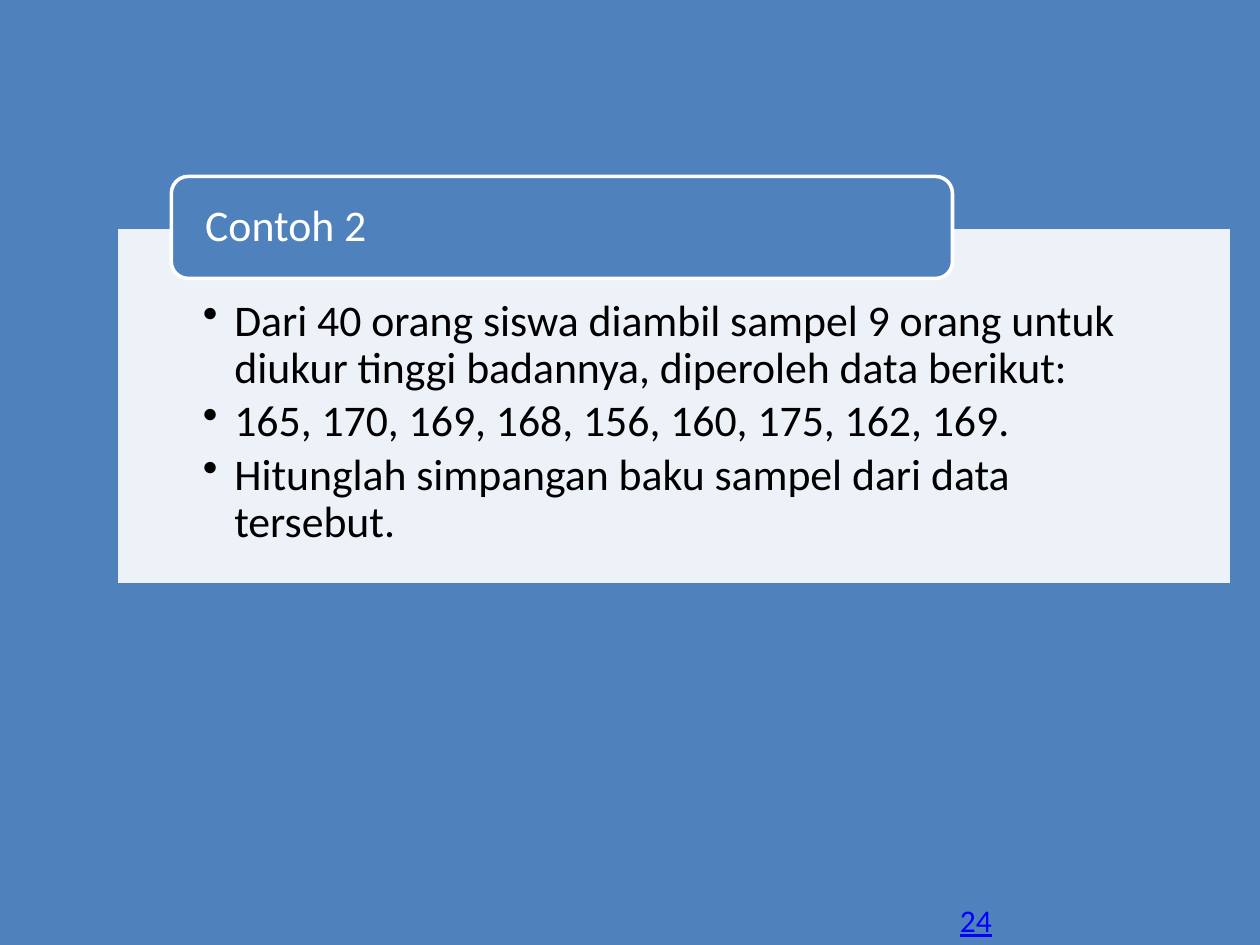
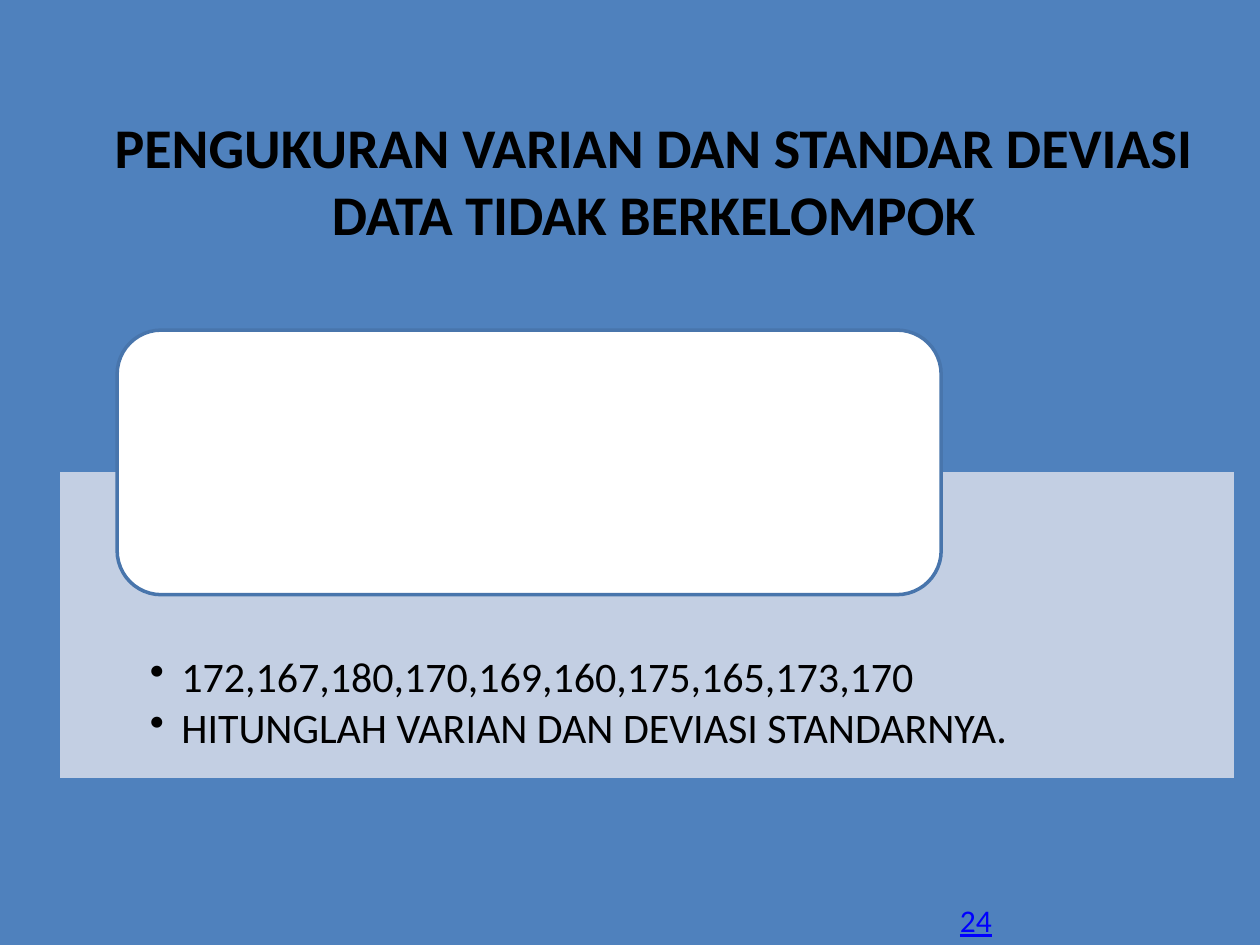
from dataclasses import dataclass

from lxml.etree import SubElement
from pptx import Presentation
from pptx.dml.color import RGBColor
from pptx.enum.shapes import MSO_SHAPE
from pptx.enum.text import MSO_ANCHOR, PP_ALIGN
from pptx.oxml.ns import qn
from pptx.util import Inches, Pt

COLS, ROWS = 100, 75
WIDTH, HEIGHT = Inches(10), Inches(7.5)
COL, ROW = WIDTH // COLS, HEIGHT // ROWS
BLUE, DARK_BLUE, PALE = "4F81BD", "4875AC", "D0D8E8"
WHITE, BLACK, LINK_BLUE = "FFFFFF", "000000", "0000FF"
FONT = "Calibri"
INDENT = 2.5 * COL
PAGE_NUMBER = "24"


@dataclass(frozen=True)
class Area:
    col: float
    row: float
    cols: float
    rows: float

    def emu(self) -> tuple[int, int, int, int]:
        return (int(self.col * COL), int(self.row * ROW),
                int(self.cols * COL), int(self.rows * ROW))


@dataclass(frozen=True)
class Panel:
    area: Area
    fill: str
    side: float
    top: float
    size: int
    bullets: tuple[str, ...]


@dataclass(frozen=True)
class Label:
    area: Area
    fill: str
    line: str
    text: str = ""


@dataclass(frozen=True)
class Page:
    panel: Panel
    label: Label
    title: tuple[str, ...] = ()


TITLE_AREA = Area(3.8, 8.4, 96.2, 14.5)
NUMBER_AREA = Area(75.2, 71, 4.6, 4)

PAGES = (
    Page(
        Panel(Area(9.2, 18, 88.6, 28.4), WHITE, 6.9, 5.7, 25, (
            "Dari 40 orang siswa diambil sampel 9 orang untuk diukur tinggi "
            "badannya, diperoleh data berikut:",
            "165, 170, 169, 168, 156, 160, 175, 162, 169.",
            "Hitunglah simpangan baku sampel dari data tersebut.",
        )),
        Label(Area(13.6, 14, 62, 8.1), BLUE, WHITE, "Contoh 2"),
    ),
    Page(
        Panel(Area(4.6, 37.3, 93.5, 24.6), PALE, 7.3, 14.8, 24, (
            "172,167,180,170,169,160,175,165,173,170",
            "HITUNGLAH VARIAN DAN DEVIASI STANDARNYA.",
        )),
        Label(Area(9.3, 26.2, 65.4, 21), WHITE, DARK_BLUE),
        ("PENGUKURAN VARIAN DAN STANDAR DEVIASI", "DATA TIDAK BERKELOMPOK"),
    ),
)


def rgb(color: str) -> RGBColor:
    return RGBColor.from_string(color)


def apply(target, **values) -> None:
    for name, value in values.items():
        setattr(target, name, value)


def write(p, text: str, size: int, color: str, **font) -> None:
    r = p.add_run()
    r.text = text
    apply(r.font, name=FONT, size=Pt(size), **font)
    r.font.color.rgb = rgb(color)


def add_box(s, kind, area: Area, fill: str, line: str):
    sp = s.shapes.add_shape(kind, *area.emu())
    sp.shadow.inherit = False
    sp.fill.solid()
    sp.fill.fore_color.rgb = rgb(fill)
    sp.line.color.rgb = rgb(line)
    sp.line.width = Pt(2)
    return sp


def add_panel(s, panel: Panel) -> None:
    sp = add_box(s, MSO_SHAPE.RECTANGLE, panel.area, panel.fill, BLUE)
    color = sp.fill._xPr.find(qn("a:solidFill"))[0]
    SubElement(color, qn("a:alpha"), val="90000")
    tf = sp.text_frame
    side = int(panel.side * COL)
    apply(tf, word_wrap=True, vertical_anchor=MSO_ANCHOR.TOP,
          margin_left=side, margin_right=side,
          margin_top=int(panel.top * ROW), margin_bottom=int(1.9 * ROW))
    for i, text in enumerate(panel.bullets):
        p = tf.add_paragraph() if i else tf.paragraphs[0]
        apply(p, alignment=PP_ALIGN.LEFT, level=1, line_spacing=0.9,
              space_after=Pt(0.14 * panel.size))
        pPr = p._p.get_or_add_pPr()
        pPr.set("marL", str(int(INDENT)))
        pPr.set("indent", str(-int(INDENT)))
        SubElement(pPr, qn("a:buChar"), char="•")
        write(p, text, panel.size, BLACK)


def add_label(s, label: Label) -> None:
    sp = add_box(s, MSO_SHAPE.ROUNDED_RECTANGLE, label.area, label.fill, label.line)
    if label.text:
        tf = sp.text_frame
        side = int(2.3 * COL)
        apply(tf, word_wrap=True, vertical_anchor=MSO_ANCHOR.MIDDLE,
              margin_left=side, margin_right=side, margin_top=0, margin_bottom=0)
        p = tf.paragraphs[0]
        apply(p, alignment=PP_ALIGN.LEFT, line_spacing=0.9)
        write(p, label.text, 25, WHITE)


def add_number(s) -> None:
    tf = s.shapes.add_textbox(*NUMBER_AREA.emu()).text_frame
    tf.word_wrap = False
    write(tf.paragraphs[0], PAGE_NUMBER, 18, LINK_BLUE, underline=True)


def set_title(s, lines: tuple[str, ...]) -> None:
    sp = s.shapes.title
    left, top, width, height = TITLE_AREA.emu()
    apply(sp, left=left, top=top, width=width, height=height)
    tf = sp.text_frame
    apply(tf, word_wrap=True, vertical_anchor=MSO_ANCHOR.TOP)
    p = tf.paragraphs[0]
    p.alignment = PP_ALIGN.CENTER
    for i, line in enumerate(lines):
        if i:
            p.add_line_break()
        write(p, line, 32, BLACK, bold=True)


def add_page(prs, page: Page) -> None:
    layout = "Title Only" if page.title else "Blank"
    s = prs.slides.add_slide(prs.slide_layouts.get_by_name(layout))
    add_number(s)
    if page.title:
        set_title(s, page.title)
    add_panel(s, page.panel)
    add_label(s, page.label)


def main() -> None:
    prs = Presentation()
    apply(prs, slide_width=WIDTH, slide_height=HEIGHT)
    background = prs.slide_master.background.fill
    background.solid()
    background.fore_color.rgb = rgb(BLUE)
    for page in PAGES:
        add_page(prs, page)
    prs.save("out.pptx")


if __name__ == "__main__":
    main()
